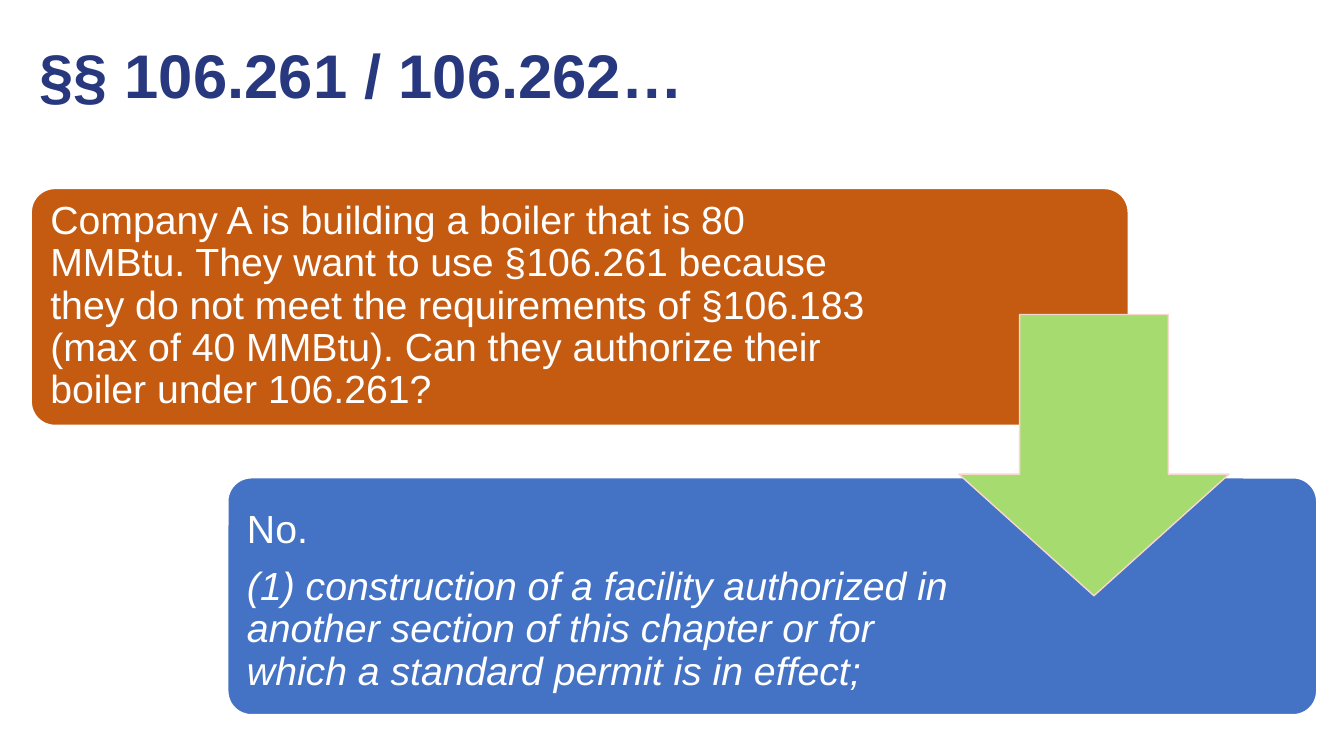
from pptx import Presentation
from pptx import util as u
from pptx.dml.color import RGBColor
from pptx.enum import shapes, text

PX = 9144  # 100 px to the inch
WHITE = "FFFFFF"


def rgb(value):
    return RGBColor.from_string(value)


class SlideBuilder:
    font = "Arial"
    line_spacing = 0.9

    def __init__(self, deck):
        self.page = deck.slides.add_slide(deck.slide_layouts[6])

    def shape(self, kind, bounds, fill, line, adjustments):
        shape = self.page.shapes.add_shape(kind, *(v * PX for v in bounds))
        shape.shadow.inherit = False
        shape.fill.solid()
        shape.fill.fore_color.rgb = rgb(fill)
        shape.line.color.rgb = rgb(line)
        shape.line.width = u.Pt(1)
        for index, value in enumerate(adjustments):
            shape.adjustments[index] = value

    def text(self, bounds, lines, size, color=WHITE, bold=False, inset=(12, 12),
             anchor=text.MSO_ANCHOR.MIDDLE):
        """Add a text box; lines holds (wording, italic) pairs."""
        box = self.page.shapes.add_textbox(*(v * PX for v in bounds))
        frame = box.text_frame
        frame.word_wrap = True
        frame.vertical_anchor = anchor
        frame.margin_left = frame.margin_right = inset[0] * PX
        frame.margin_top = frame.margin_bottom = inset[1] * PX
        for index, (wording, italic) in enumerate(lines):
            para = frame.paragraphs[0] if index == 0 else frame.add_paragraph()
            para.text = wording
            para.line_spacing = self.line_spacing
            para.space_before = u.Pt(10 if index else 0)
            para.font.name = self.font
            para.font.size = u.Pt(size)
            para.font.bold = bold
            para.font.italic = italic
            para.font.color.rgb = rgb(color)

    def card(self, bounds, fill):
        self.shape(shapes.MSO_SHAPE.ROUNDED_RECTANGLE, bounds, fill, WHITE, [0.1])

    def down_arrow(self, bounds, fill, line):
        self.shape(shapes.MSO_SHAPE.DOWN_ARROW, bounds, fill, line, [0.55, 0.45])


def main():
    deck = Presentation()
    deck.slide_width, deck.slide_height = 1333 * PX, 750 * PX
    slide = SlideBuilder(deck)

    # Question
    slide.card((31, 187, 1088, 235), "C55A11")
    slide.text((38, 193, 843, 222), [
        ("Company A is building a boiler that is 80 MMBtu. They want to use "
         "§106.261 because they do not meet the requirements of §106.183 "
         "(max of 40 MMBtu). Can they authorize their boiler under 106.261?", False),
    ], 28)

    # Answer
    slide.card((226, 474, 1080, 235), "4472C4")
    slide.text((233, 486, 723, 222), [
        ("No.", False),
        ("(1) construction of a facility authorized in another section of this "
         "chapter or for which a standard permit is in effect;", True),
    ], 28)

    # Arrow from question to answer
    slide.down_arrow((951, 312, 268, 279), "A5DB6F", "F8D7CE")

    # Title
    slide.text((29, 40, 1243, 200), [("§§ 106.261 / 106.262…", False)], 44,
               "27387E", True, (10, 5), text.MSO_ANCHOR.TOP)

    deck.save("out.pptx")


if __name__ == "__main__":
    main()
